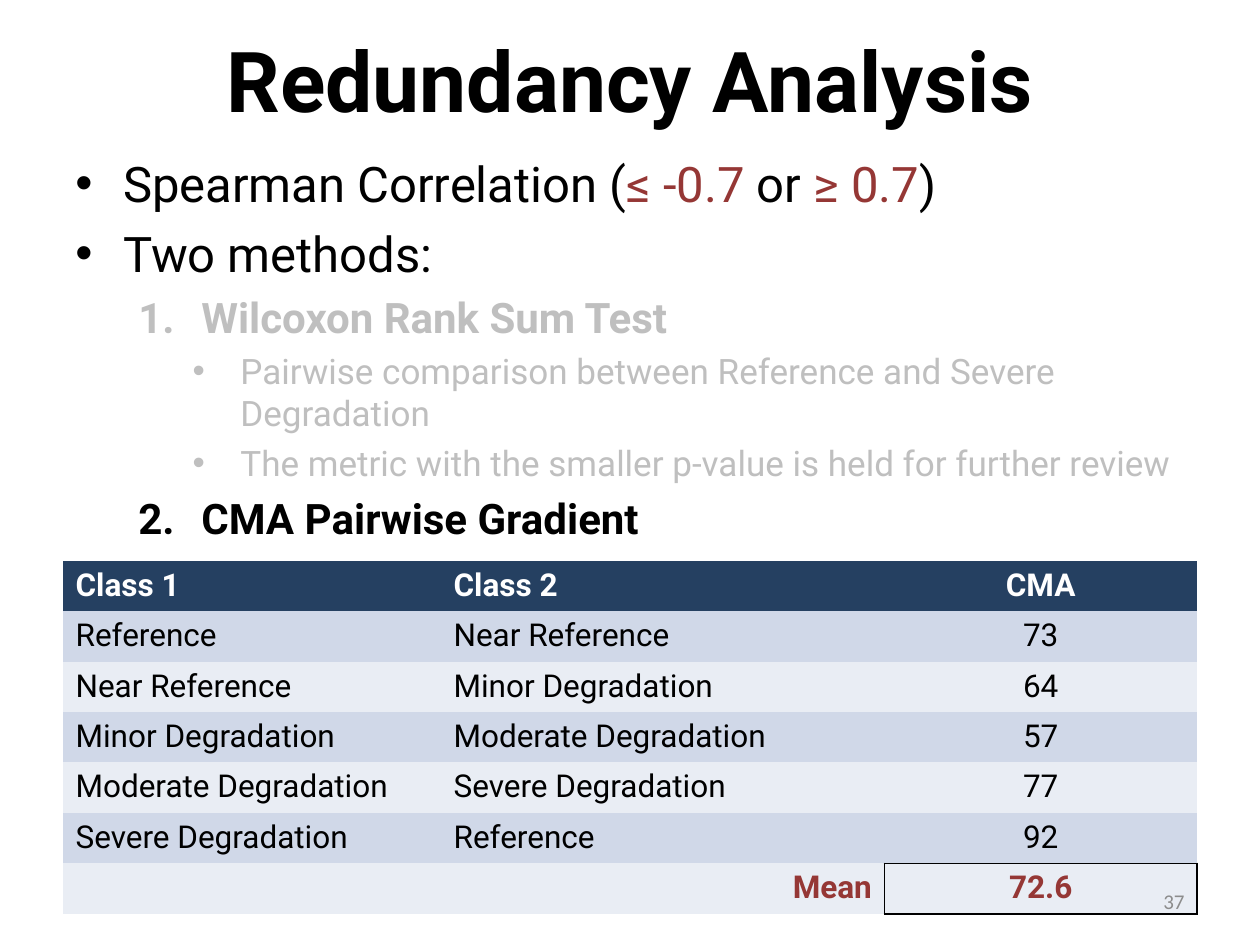
"""Build the Redundancy Analysis slide."""
import pptx
import pptx.util
import pptx.dml.color
import pptx.enum.text
import pptx.oxml.ns
import lxml.etree

Inches, Pt = pptx.util.Inches, pptx.util.Pt
ALIGN = pptx.enum.text.PP_ALIGN
ANCHOR = pptx.enum.text.MSO_ANCHOR
HUES = {
    "black": "000000", "white": "FFFFFF", "red": "953735", "faded": "BFBFBF",
    "gray": "8C8C8C", "navy": "254061", "dark": "D0D8E8", "light": "E9EDF4",
}
SIDES = {"l": ALIGN.LEFT, "c": ALIGN.CENTER, "r": ALIGN.RIGHT}
LEVELS = [
    {"size": 28, "left": 0.38, "hang": 0.38, "bold": False, "mark": "•"},
    {"size": 24, "left": 1, "hang": 0.5, "bold": True, "mark": None},
    {"size": 20, "left": 1.31, "hang": 0.38, "bold": False, "mark": "•"},
]
POINTS = [
    (0, [("Spearman Correlation (", "black"), ("≤ -0.7 ", "red"),
         ("or ", "black"), ("≥ 0.7", "red"), (")", "black")]),
    (0, [("Two methods:", "black")]),
    (1, [("Wilcoxon Rank Sum Test", "faded")]),
    (2, [("Pairwise comparison between Reference and Severe Degradation", "faded")]),
    (2, [("The metric with the smaller p-value is held for further review", "faded")]),
    (1, [("CMA Pairwise Gradient", "black")]),
]
ROWS = [
    ("Class 1", "Class 2", "CMA"),
    ("Reference", "Near Reference", "73"),
    ("Near Reference", "Minor Degradation", "64"),
    ("Minor Degradation", "Moderate Degradation", "57"),
    ("Moderate Degradation", "Severe Degradation", "77"),
    ("Severe Degradation", "Reference", "92"),
    ("", "Mean", "72.6"),
]
WIDTHS = [3, 3.52, 2.48]
BORDERS = {(5, 2): ["lnB"], (6, 1): ["lnR"], (6, 2): ["lnL", "lnR", "lnT", "lnB"]}
NO_STYLE = "{2D5ABB26-0587-4C30-8999-92F81FD0307C}"


def color(name):
    return pptx.dml.color.RGBColor.from_string(HUES[name])


def node(parent, tag, **attrs):
    return lxml.etree.SubElement(parent, pptx.oxml.ns.qn("a:" + tag), attrs)


def write(para, text, size=18, hue="black", bold=False, align="l", font="Roboto"):
    para.alignment = SIDES[align]
    run = para.add_run()
    run.text = text
    run.font.name, run.font.size, run.font.bold = font, Pt(size), bold
    run.font.color.rgb = color(hue)


def box(slide, place, anchor=ANCHOR.TOP):
    frame = slide.shapes.add_textbox(*map(Inches, place)).text_frame
    frame.word_wrap, frame.vertical_anchor = True, anchor
    return frame


def outline(frame):
    for i, (depth, parts) in enumerate(POINTS):
        level = LEVELS[depth]
        para = frame.add_paragraph() if i else frame.paragraphs[0]
        para.level = depth
        para.space_before = Pt(round(level["size"] * 0.22, 1))
        props = para._p.get_or_add_pPr()
        props.set("marL", str(Inches(level["left"])))
        props.set("indent", str(-Inches(level["hang"])))
        if level["mark"]:
            node(props, "buFont", typeface="Arial")
            node(props, "buChar", char=level["mark"])
        else:
            node(props, "buFont", typeface="+mj-lt")
            node(props, "buAutoNum", type="arabicPeriod")
        for text, hue in parts:
            write(para, text, level["size"], hue, level["bold"])


def border(cell, sides):
    props = cell._tc.get_or_add_tcPr()
    for i, side in enumerate(sides):
        line = node(props, side, w=str(Pt(1)))
        node(node(line, "solidFill"), "srgbClr", val=HUES["black"])
        props.insert(i, line)


def grid(slide):
    high = 0.39
    place = (0.5, 4.45, sum(WIDTHS), high * len(ROWS))
    table = slide.shapes.add_table(len(ROWS), len(WIDTHS), *map(Inches, place)).table
    table._tbl.tblPr.find(pptx.oxml.ns.qn("a:tableStyleId")).text = NO_STYLE
    table.horz_banding = False
    for col, width in zip(table.columns, WIDTHS):
        col.width = Inches(width)
    last = len(ROWS) - 1
    for r, row in enumerate(ROWS):
        table.rows[r].height = Inches(high)
        fill = "navy" if r == 0 else "dark" if r % 2 else "light"
        hue = {0: "white", last: "red"}.get(r, "black")
        for c, text in enumerate(row):
            cell = table.cell(r, c)
            cell.fill.solid()
            cell.fill.fore_color.rgb = color(fill)
            align = "c" if c == 2 else "r" if r == last else "l"
            write(cell.text_frame.paragraphs[0], text, hue=hue,
                  bold=r in (0, last), align=align)
            border(cell, BORDERS.get((r, c), []))


def main():
    deck = pptx.Presentation()
    deck.slide_width, deck.slide_height = Inches(10), Inches(7.5)
    slide = deck.slides.add_slide(deck.slide_layouts[6])
    title = box(slide, (0.5, 0, 9, 1.25), ANCHOR.MIDDLE)
    write(title.paragraphs[0], "Redundancy Analysis", 48, bold=True, align="c")
    outline(box(slide, (0.5, 1.17, 9, 5.53)))
    grid(slide)
    number = box(slide, (7.17, 6.95, 2.33, 0.4), ANCHOR.MIDDLE)
    write(number.paragraphs[0], "37", 12, "gray", align="r", font="Calibri")
    deck.save("out.pptx")


if __name__ == "__main__":
    main()
